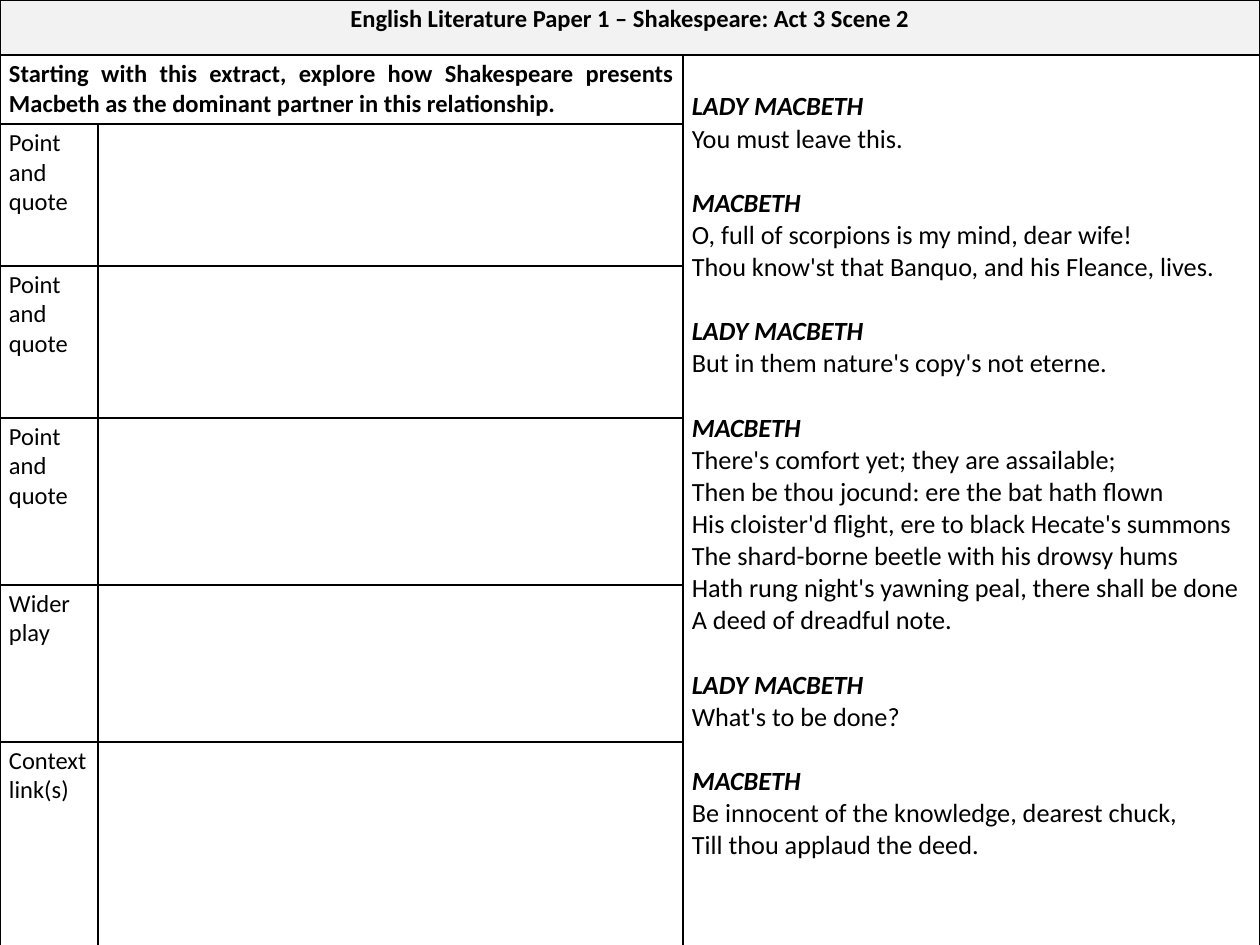
from lxml.etree import SubElement
from pptx import Presentation
from pptx.dml.color import RGBColor as Rgb
from pptx.enum.text import PP_ALIGN as Align
from pptx.oxml.ns import qn
from pptx.util import Emu, Pt

PX = 914400 // 126
THEME = {
    "font": "Calibri",
    "ink": "000000",
    "header": "F2F2F2",
    "task_size": 14,
    "speech_size": 15,
    "speech_gap": 18.3,
    "border": 1,
}

TITLE = "English Literature Paper 1 – Shakespeare: Act 3 Scene 2"
QUESTION = ("Starting with this extract, explore how Shakespeare presents "
            "Macbeth as the dominant partner in this relationship.")
PROMPTS = ["Point and quote"] * 3 + ["Wider play", "Context link(s)"]
EXTRACT = [
    ("LADY MACBETH", ["You must leave this."]),
    ("MACBETH", ["O, full of scorpions is my mind, dear wife!",
                 "Thou know'st that Banquo, and his Fleance, lives."]),
    ("LADY MACBETH", ["But in them nature's copy's not eterne."]),
    ("MACBETH", ["There's comfort yet; they are assailable;",
                 "Then be thou jocund: ere the bat hath flown",
                 "His cloister'd flight, ere to black Hecate's summons",
                 "The shard-borne beetle with his drowsy hums",
                 "Hath rung night's yawning peal, there shall be done",
                 "A deed of dreadful note."]),
    ("LADY MACBETH", ["What's to be done?"]),
    ("MACBETH", ["Be innocent of the knowledge, dearest chuck,",
                 "Till thou applaud the deed."]),
]
COLUMNS = [98, 585, 577]
ROWS = [55, 69, 142, 152, 167, 157, 210]


def write(paragraph, text, size, bold=False, italic=False, align=Align.LEFT):
    paragraph.text = text
    paragraph.alignment = align
    font = paragraph.runs[0].font
    font.name, font.size = THEME["font"], Pt(size)
    font.bold, font.italic = bold, italic
    font.color.rgb = Rgb.from_string(THEME["ink"])


def draw_borders(cell):
    properties = cell._tc.get_or_add_tcPr()
    for side in ("a:lnL", "a:lnR", "a:lnT", "a:lnB"):
        line = SubElement(properties, qn(side), w=str(Pt(THEME["border"])))
        fill = SubElement(line, qn("a:solidFill"))
        SubElement(fill, qn("a:srgbClr"), val=THEME["ink"])


prs = Presentation()
prs.slide_width, prs.slide_height = Emu(1260 * PX), Emu(945 * PX)
slide = prs.slides.add_slide(prs.slide_layouts[6])

# Worksheet grid
worksheet = slide.shapes.add_table(
    len(ROWS), len(COLUMNS), 0, 0, sum(COLUMNS) * PX, sum(ROWS) * PX).table
worksheet.first_row = worksheet.horz_banding = False
for column, width in zip(worksheet.columns, COLUMNS):
    column.width = Emu(width * PX)
for row, height in zip(worksheet.rows, ROWS):
    row.height = Emu(height * PX)
for cell in worksheet.iter_cells():
    draw_borders(cell)
    cell.fill.background()
    cell.margin_left = cell.margin_right = Emu(9 * PX)
    cell.margin_top = cell.margin_bottom = Emu(4 * PX)

# Header across all columns
header = worksheet.cell(0, 0)
header.merge(worksheet.cell(0, 2))
header.fill.solid()
header.fill.fore_color.rgb = Rgb.from_string(THEME["header"])
write(header.text_frame.paragraphs[0], TITLE, THEME["task_size"],
      bold=True, align=Align.CENTER)

# Exam question
question = worksheet.cell(1, 0)
question.merge(worksheet.cell(1, 1))
write(question.text_frame.paragraphs[0], QUESTION, THEME["task_size"],
      bold=True, align=Align.JUSTIFY)

# Planning prompts
for row_index, prompt in enumerate(PROMPTS, start=2):
    prompt_cell = worksheet.cell(row_index, 0)
    write(prompt_cell.text_frame.paragraphs[0], prompt, THEME["task_size"])

# Extract beside the question and prompts
extract = worksheet.cell(1, 2)
extract.merge(worksheet.cell(len(ROWS) - 1, 2))
extract.margin_top = Emu(36 * PX)
for index, (speaker, verses) in enumerate(EXTRACT):
    if index == 0:
        speaker_line = extract.text_frame.paragraphs[0]
    else:
        speaker_line = extract.text_frame.add_paragraph()
        speaker_line.space_before = Pt(THEME["speech_gap"])
    write(speaker_line, speaker, THEME["speech_size"], bold=True, italic=True)
    for verse in verses:
        write(extract.text_frame.add_paragraph(), verse, THEME["speech_size"])

prs.save("out.pptx")
